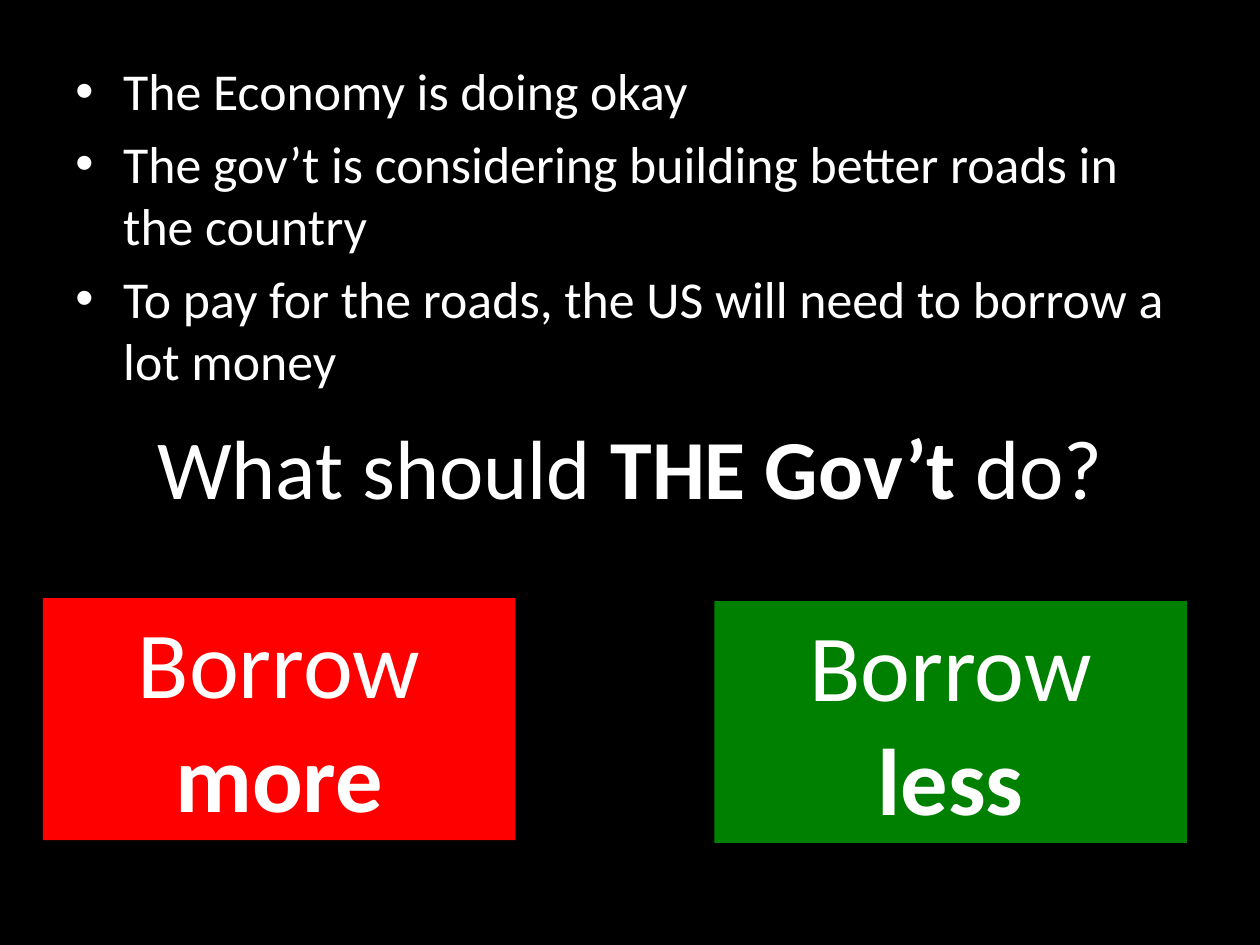
from pptx import Presentation
from pptx.dml.color import RGBColor
from pptx.enum.shapes import MSO_SHAPE
from pptx.enum.text import MSO_ANCHOR, MSO_AUTO_SIZE, PP_ALIGN
from pptx.oxml.xmlchemy import OxmlElement
from pptx.util import Inches, Pt

RECT = MSO_SHAPE.RECTANGLE
TOP = MSO_ANCHOR.TOP
GROW = MSO_AUTO_SIZE.SHAPE_TO_FIT_TEXT
FIXED = MSO_AUTO_SIZE.NONE
LEFT, MID = PP_ALIGN.LEFT, PP_ALIGN.CENTER

BLACK = RGBColor(0x00, 0x00, 0x00)
WHITE = RGBColor(0xFF, 0xFF, 0xFF)
RED = RGBColor(0xFF, 0x00, 0x00)
GREEN = RGBColor(0x00, 0x80, 0x00)

WIDE, HIGH = Inches(10), Inches(7.5)
INDENT = Inches(0.38)

FACTS = (
    "The Economy is doing okay",
    "The gov’t is considering building better roads in the country",
    "To pay for the roads, the US will need to borrow a lot money",
)
ASK = (("What should ", False), ("THE Gov’t ", True), ("do?", False))
CARDS = (
    ("more", RED, 0.034, 0.633),
    ("less", GREEN, 0.567, 0.636),
)


def put(item, **values):
    for name, value in values.items():
        setattr(item, name, value)


def place(left, top, wide, high):
    return (round(left * WIDE), round(top * HIGH),
            round(wide * WIDE), round(high * HIGH))


def write(frame, lines, size, align):
    for row, line in enumerate(lines):
        para = frame.add_paragraph() if row else frame.paragraphs[0]
        para.alignment = align
        for text, bold in line:
            run = para.add_run()
            run.text = text
            put(run.font, name="Calibri", size=Pt(size), bold=bold)
            run.font.color.rgb = WHITE


def add_text(slide, area, lines, size, align, wrap, fit):
    frame = slide.shapes.add_textbox(*area).text_frame
    put(frame, word_wrap=wrap, auto_size=fit, vertical_anchor=TOP)
    write(frame, lines, size, align)
    return frame


def add_dots(frame):
    for para in frame.paragraphs:
        para.space_before = Pt(6)
        props = para._p.get_or_add_pPr()
        props.set("marL", str(INDENT))
        props.set("indent", str(-INDENT))
        for tag, key, value in (("a:buFont", "typeface", "Arial"),
                                ("a:buChar", "char", "•")):
            mark = OxmlElement(tag)
            mark.set(key, value)
            props.append(mark)


def add_card(slide, word, fill, left, top):
    card = slide.shapes.add_shape(RECT, *place(left, top, 0.375, 0.256))
    card.shadow.inherit = False
    card.fill.solid()
    card.fill.fore_color.rgb = fill
    card.line.fill.background()
    put(card.text_frame, word_wrap=True, auto_size=GROW, vertical_anchor=TOP)
    write(card.text_frame, [[("Borrow", False)], [(word, True)]], 54, MID)


def main():
    deck = Presentation()
    put(deck, slide_width=WIDE, slide_height=HIGH)
    slide = deck.slides.add_slide(deck.slide_layouts[6])
    back = slide.background.fill
    back.solid()
    back.fore_color.rgb = BLACK

    add_text(slide, place(0.111, 0.433, 0.778, 0.121), [ASK], 48, MID, False, GROW)
    for card in CARDS:
        add_card(slide, *card)
    facts = [[(fact, False)] for fact in FACTS]
    add_dots(add_text(slide, place(0.05, 0.056, 0.9, 0.323),
                      facts, 29.6, LEFT, True, FIXED))
    deck.save("out.pptx")


if __name__ == "__main__":
    main()
